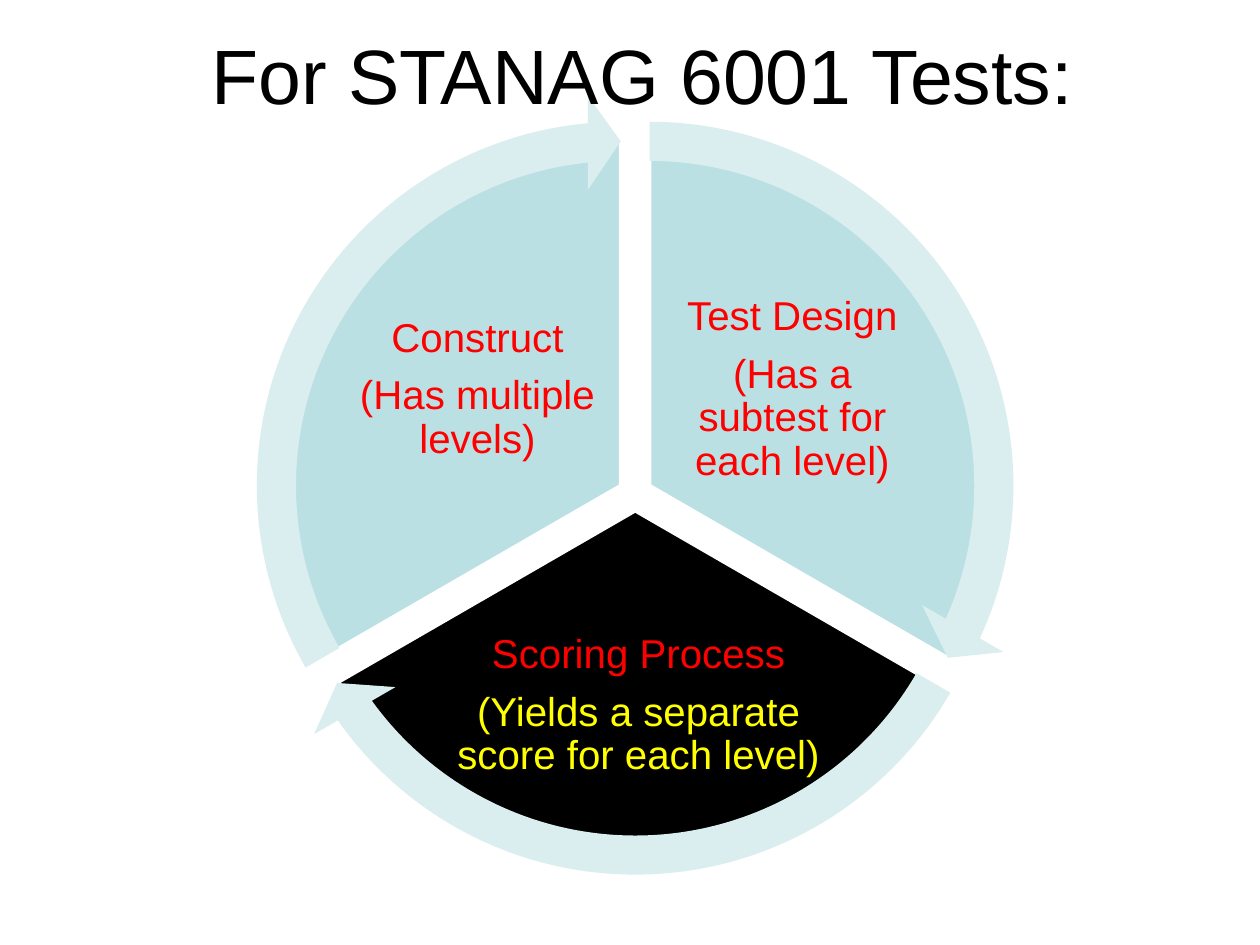
from pptx import Presentation
from pptx.dml.color import RGBColor
from pptx.enum.shapes import MSO_SHAPE as Kind
from pptx.enum.text import MSO_ANCHOR as Anchor, MSO_AUTO_SIZE as Auto, PP_ALIGN as Align
from pptx.util import Pt

TEAL = RGBColor(0xBB, 0xE0, 0xE3)
PALE = RGBColor(0xDA, 0xED, 0xEF)
BLACK = RGBColor(0, 0, 0)
WHITE = RGBColor(255, 255, 255)
RED = RGBColor(255, 0, 0)
YELLOW = RGBColor(255, 255, 0)

# Content
TITLE = "For STANAG 6001 Tests:"
# Centre, start and end angle (in 100000 units), fill, text box, lines
PARTS = [
    ((371.2, 277.5), 162, 18, TEAL, (381.6, 163.4, 142.6, 118.8),
     [("Test Design", RED), ("(Has a subtest for each level)", RED)]),
    ((363, 291.9), 18, 90, BLACK, (258.5, 351.4, 213.1, 104.4),
     [("Scoring Process", RED), ("(Yields a separate score for each level)", YELLOW)]),
    ((354.7, 277.5), 90, 162, TEAL, (201.6, 163.4, 142.6, 118.8),
     [("Construct", RED), ("(Has multiple levels)", RED)]),
]
PIE, RING = 398.2, 447.1
SIZE = 23

deck = Presentation()
deck.slide_width, deck.slide_height = Pt(720), Pt(540)
slide = deck.slides.add_slide(deck.slide_layouts[6])


def add_round(kind, mid, size, fill, angles):
    x, y = (c - size / 2 for c in mid)
    shape = slide.shapes.add_shape(kind, Pt(x), Pt(y), Pt(size), Pt(size))
    shape.shadow.inherit = False
    shape.fill.solid()
    shape.fill.fore_color.rgb = fill
    for i, value in enumerate(angles):
        shape.adjustments[i] = value
    return shape


def add_text(box, lines, size, frame_style, para_style):
    frame = slide.shapes.add_textbox(*map(Pt, box)).text_frame
    for name, value in frame_style.items():
        setattr(frame, name, value)
    for i, (text, color) in enumerate(lines):
        para = frame.add_paragraph() if i else frame.paragraphs[0]
        for name, value in para_style.items():
            setattr(para, name, value)
        run = para.add_run()
        run.text = text
        run.font.name, run.font.size = "Arial", Pt(size)
        run.font.color.rgb = color


# Pie slices with their labels
sides = ("left", "top", "right", "bottom")
label = {"word_wrap": True, "vertical_anchor": Anchor.MIDDLE,
         **{f"margin_{side}": Pt(2.3) for side in sides}}
para = {"alignment": Align.CENTER, "line_spacing": 0.9, "space_after": Pt(0.35 * SIZE)}
for mid, start, end, fill, box, lines in PARTS:
    pie = add_round(Kind.PIE, mid, PIE, fill, (start, end))
    pie.line.color.rgb = WHITE
    pie.line.width = Pt(2)
    add_text(box, lines, SIZE, label, para)

# Arrows around the slices, each ending just short of its slice
for mid, start, end, *rest in PARTS:
    tip = end - 3.28
    arrow = add_round(Kind.CIRCULAR_ARROW, mid, RING, PALE,
                      (0.05, 3.28, tip, start, 0.06))
    arrow.line.fill.background()

# Title
add_text((113.8, 12.2, 522, 60.5), [(TITLE, BLACK)], 44,
         {"word_wrap": True, "auto_size": Auto.SHAPE_TO_FIT_TEXT}, {})

deck.save("out.pptx")
